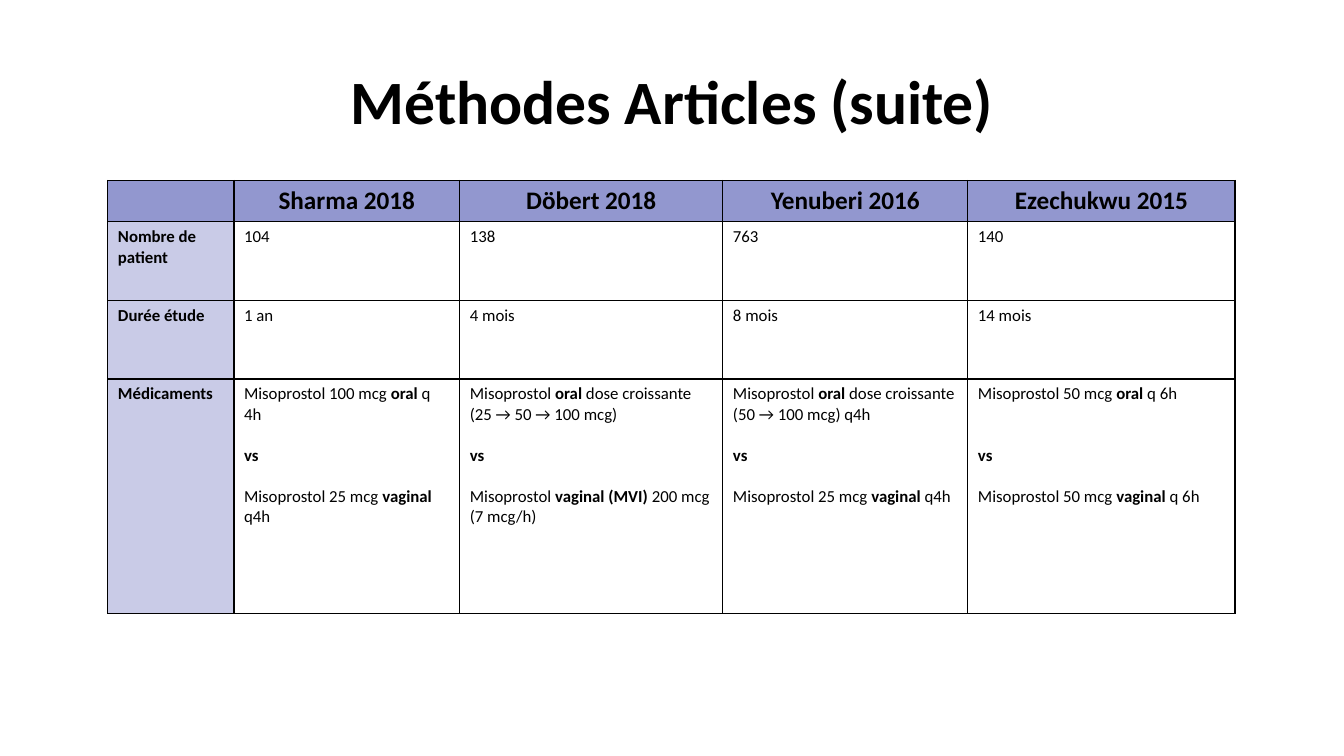
from dataclasses import dataclass

from lxml import etree
from pptx import Presentation
from pptx import util as u
from pptx.dml.color import RGBColor
from pptx.enum import text
from pptx.oxml import ns


@dataclass(frozen=True)
class Theme:
    font: str = "Calibri"
    ink: str = "000000"
    header_fill: str = "9297CF"
    label_fill: str = "C9CBE7"
    body_fill: str = "FFFFFF"
    title_size: float = 44
    header_size: float = 18
    body_size: float = 12
    blank_line: float = 14.65
    border_width: float = 1


STUDIES = ["", "Sharma 2018", "Döbert 2018", "Yenuberi 2016", "Ezechukwu 2015"]
PATIENTS = ["Nombre de patient", "104", "138", "763", "140"]
DURATIONS = ["Durée étude", "1 an", "4 mois", "8 mois", "14 mois"]
# Each treatment: oral arm, vaginal arm, blank lines before "vs"; ** marks bold
TREATMENTS = [
    ("Misoprostol 100 mcg **oral** q 4h",
     "Misoprostol 25 mcg **vaginal** q4h", 1),
    ("Misoprostol **oral** dose croissante (25 → 50 → 100 mcg)",
     "Misoprostol **vaginal (MVI) **200 mcg (7 mcg/h)", 1),
    ("Misoprostol **oral** dose croissante (50 → 100 mcg) q4h",
     "Misoprostol 25 mcg **vaginal** q4h", 1),
    ("Misoprostol 50 mcg **oral** q 6h",
     "Misoprostol 50 mcg **vaginal** q 6h", 2),
]
COLUMN_WIDTHS = [1.25, 2.24, 2.61, 2.43, 2.65]
ROW_HEIGHTS = [0.41, 0.78, 0.78, 2.33]


def apply(target, formats):
    for name, value in formats.items():
        setattr(target, name, value)


class SlideBuilder:
    def __init__(self, slide, theme):
        self.slide = slide
        self.theme = theme

    def fill_paragraph(self, paragraph, content, size, bold=False, **formats):
        """Fill a paragraph, switching weight at each ** mark."""
        apply(paragraph, formats)
        for index, part in enumerate(content.split("**")):
            if part:
                run = paragraph.add_run()
                run.text = part
                apply(run.font, {"name": self.theme.font, "size": u.Pt(size),
                                 "bold": bold or index % 2 == 1})
                run.font.color.rgb = RGBColor.from_string(self.theme.ink)

    def title(self, content, left, top, width, height):
        box = self.slide.shapes.add_textbox(*map(u.Inches, (left, top, width, height)))
        apply(box.text_frame, {"word_wrap": True,
                               "vertical_anchor": text.MSO_ANCHOR.MIDDLE})
        self.fill_paragraph(box.text_frame.paragraphs[0], content,
                            self.theme.title_size, bold=True,
                            alignment=text.PP_ALIGN.CENTER, line_spacing=0.9)

    def table(self, left, top, widths, heights):
        frame = self.slide.shapes.add_table(
            len(heights), len(widths),
            *map(u.Inches, (left, top, sum(widths), sum(heights))))
        table = frame.table
        for column, width in zip(table.columns, widths):
            column.width = u.Inches(width)
        for row, height in zip(table.rows, heights):
            row.height = u.Inches(height)
        return table

    def cell(self, cell, paragraphs, fill, size, bold=False, alignment=None):
        """Fill a cell from (content, blank lines above) pairs."""
        cell.fill.solid()
        cell.fill.fore_color.rgb = RGBColor.from_string(fill)
        self.borders(cell)
        for index, (content, blanks) in enumerate(paragraphs):
            frame = cell.text_frame
            paragraph = frame.add_paragraph() if index else frame.paragraphs[0]
            self.fill_paragraph(paragraph, content, size, bold, alignment=alignment,
                                space_before=u.Pt(blanks * self.theme.blank_line))

    def borders(self, cell):
        properties = cell._tc.get_or_add_tcPr()
        for index, side in enumerate(("lnL", "lnR", "lnT", "lnB")):
            line = etree.Element(ns.qn(f"a:{side}"),
                                 w=str(u.Pt(self.theme.border_width)))
            solid = etree.SubElement(line, ns.qn("a:solidFill"))
            etree.SubElement(solid, ns.qn("a:srgbClr"), val=self.theme.ink)
            properties.insert(index, line)


def main():
    presentation = Presentation()
    apply(presentation, {"slide_width": u.Inches(13.33),
                         "slide_height": u.Inches(7.5)})
    theme = Theme()
    slide = presentation.slides.add_slide(presentation.slide_layouts[6])
    builder = SlideBuilder(slide, theme)

    # Title
    builder.title("Méthodes Articles (suite)", 1.17, 0.29, 11, 1.5)

    # Study comparison
    table = builder.table(1.07, 1.79, COLUMN_WIDTHS, ROW_HEIGHTS)
    for column, study in enumerate(STUDIES):
        builder.cell(table.cell(0, column), [(study, 0)], theme.header_fill,
                     theme.header_size, True, text.PP_ALIGN.CENTER)

    treatments = [[(oral, 0), ("**vs**", blanks), (vaginal, 1)]
                  for oral, vaginal, blanks in TREATMENTS]
    rows = [[[(value, 0)] for value in values] for values in (PATIENTS, DURATIONS)]
    rows.append([[("Médicaments", 0)]] + treatments)
    for row, contents in enumerate(rows, start=1):
        for column, paragraphs in enumerate(contents):
            is_label = column == 0
            fill = theme.label_fill if is_label else theme.body_fill
            builder.cell(table.cell(row, column), paragraphs, fill,
                         theme.body_size, is_label)

    presentation.save("out.pptx")


if __name__ == "__main__":
    main()
